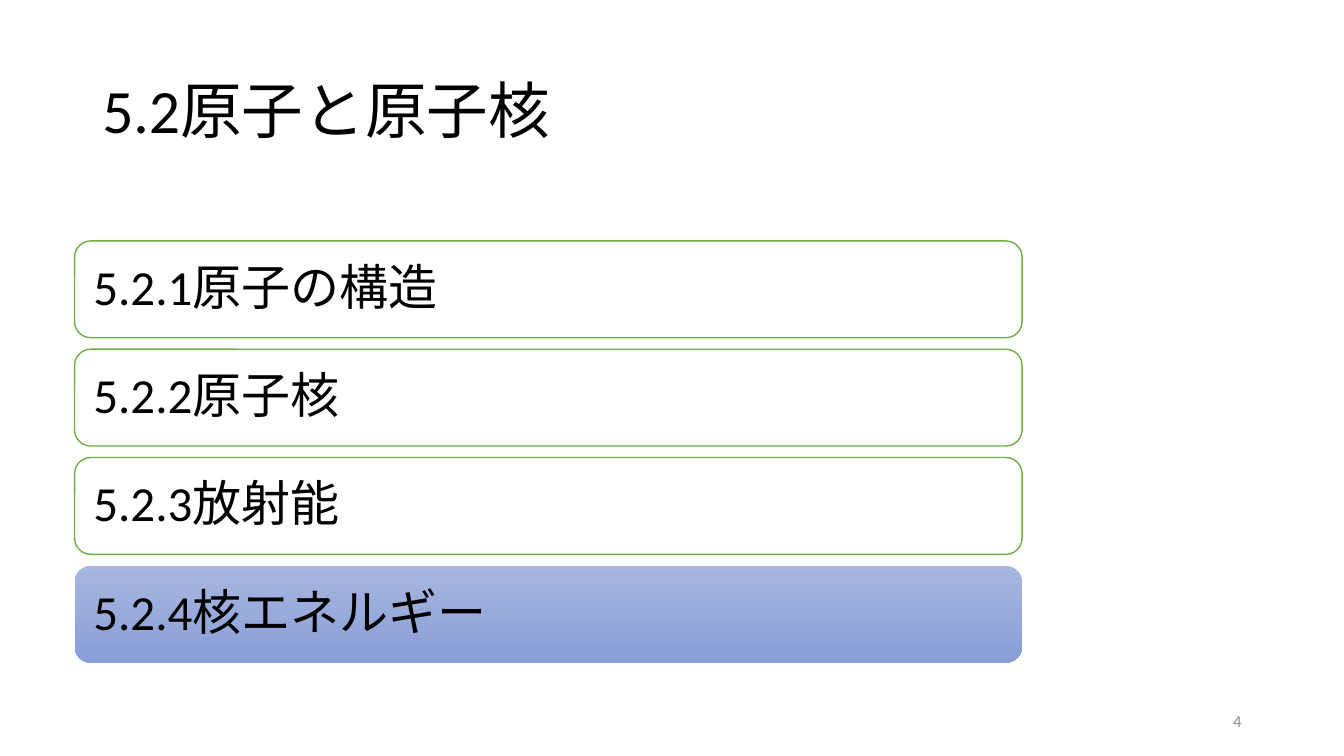
from pptx import Presentation
from pptx.dml.color import RGBColor
from pptx.enum.lang import MSO_LANGUAGE_ID as Language
from pptx.enum.shapes import MSO_SHAPE as Shape
from pptx.enum.text import MSO_ANCHOR as Anchor, PP_ALIGN as Align
from pptx.util import Pt

COLORS = {
    "text": "000000",
    "number": "8C8C8C",
    "row": "FFFFFF",
    "border": "70AD47",
    "current_top": "A8B7DF",
    "current_bottom": "889ED7",
}
SECTIONS = ["5.2.1原子の構造", "5.2.2原子核", "5.2.3放射能", "5.2.4核エネルギー"]
CURRENT = 3


def color(name):
    return RGBColor.from_string(COLORS[name])


def write(box, text, size, shade="text", align=Align.LEFT, spacing=0.9):
    frame = box.text_frame
    frame.text = text
    frame.word_wrap = True
    frame.vertical_anchor = Anchor.MIDDLE
    para = frame.paragraphs[0]
    para.alignment = align
    para.line_spacing = spacing
    font = para.runs[0].font
    font.name = "Calibri"
    font.size = Pt(size)
    font.color.rgb = color(shade)
    font.language_id = Language.JAPANESE


def add_title(page, left, top, width, height):
    box = page.shapes.add_textbox(Pt(left), Pt(top), Pt(width), Pt(height))
    write(box, "5.2原子と原子核", 44)


def add_row(page, text, is_current, left, top, width, height):
    row = page.shapes.add_shape(
        Shape.ROUNDED_RECTANGLE, Pt(left), Pt(top), Pt(width), Pt(height))
    row.shadow.inherit = False
    if is_current:
        row.fill.gradient()
        row.fill.gradient_angle = 270
        for stop, name in zip(row.fill.gradient_stops, ["current_top", "current_bottom"]):
            stop.color.rgb = color(name)
        row.line.fill.background()
    else:
        row.fill.solid()
        row.fill.fore_color.rgb = color("row")
        row.line.color.rgb = color("border")
        row.line.width = Pt(1)
    row.text_frame.margin_left = row.text_frame.margin_right = Pt(10)
    write(row, text, 35)


def add_sections(page, left, top, width, height, gap=8.2):
    row_height = (height - gap * (len(SECTIONS) - 1)) / len(SECTIONS)
    for index, text in enumerate(SECTIONS):
        row_top = top + index * (row_height + gap)
        add_row(page, text, index == CURRENT, left, row_top, width, row_height)


def add_page_number(page, left, top, width, height):
    box = page.shapes.add_textbox(Pt(left), Pt(top), Pt(width), Pt(height))
    write(box, "4", 12, "number", Align.RIGHT, 1.0)


def main():
    deck = Presentation()
    deck.slide_width, deck.slide_height = Pt(960), Pt(540)
    page = deck.slides.add_slide(deck.slide_layouts[6])
    add_title(page, 66, 28.75, 828, 104.4)
    add_sections(page, 53.3, 172.1, 676.8, 301.2)
    add_page_number(page, 678, 500.5, 216, 28.75)
    deck.save("out.pptx")


if __name__ == "__main__":
    main()
